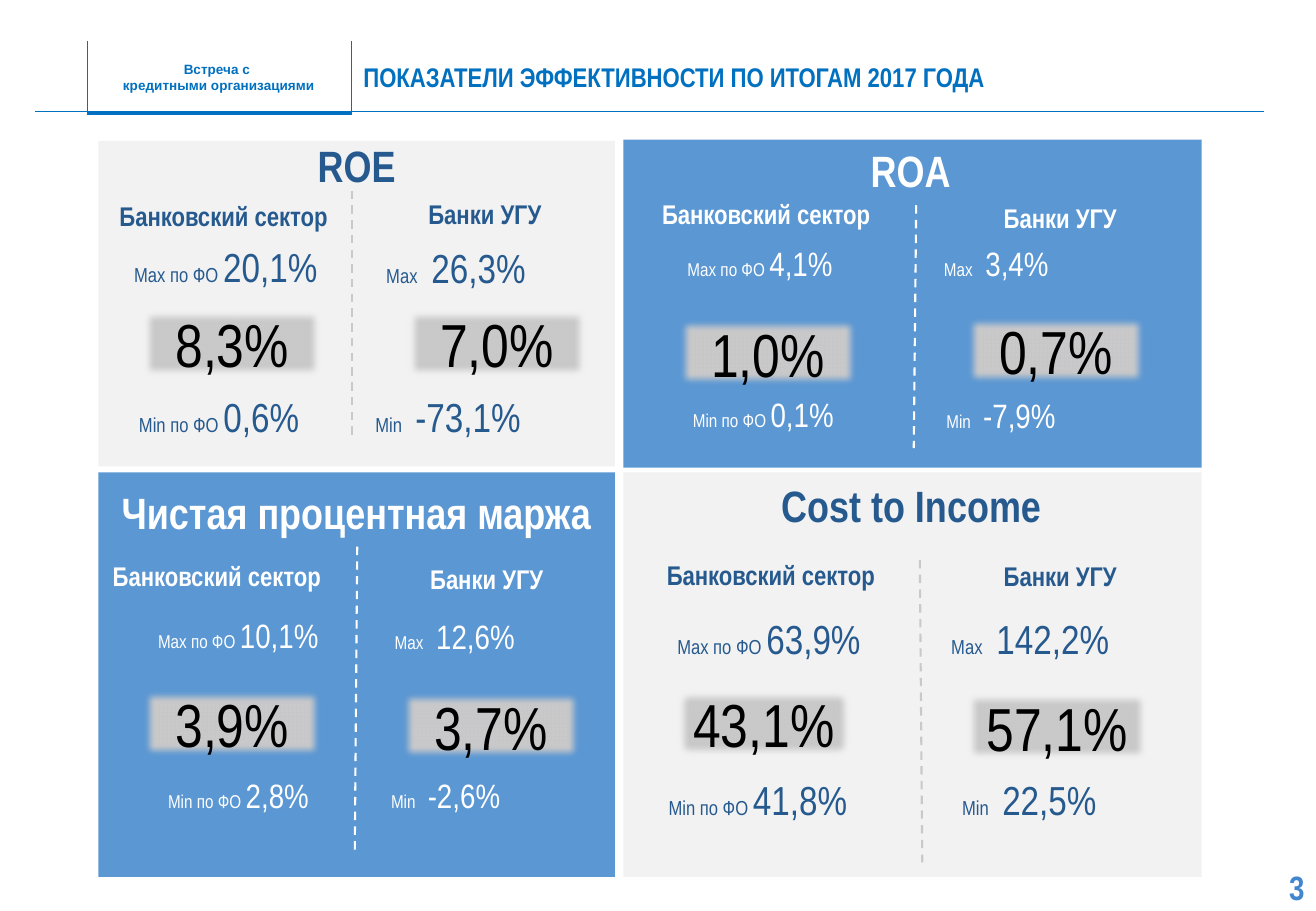
"""Build the slide of bank efficiency indicators for 2017."""
from dataclasses import dataclass
from typing import NamedTuple

from lxml.etree import SubElement
from pptx import Presentation
from pptx.dml.color import RGBColor
from pptx.enum.dml import MSO_LINE
from pptx.enum.shapes import MSO_CONNECTOR, MSO_SHAPE
from pptx.enum.text import MSO_ANCHOR, MSO_AUTO_SIZE, PP_ALIGN
from pptx.oxml.ns import qn
from pptx.shapes.autoshape import Shape
from pptx.slide import Slide
from pptx.text.text import TextFrame
from pptx.util import Inches, Pt


class Box(NamedTuple):
    left: float
    top: float
    width: float
    height: float


class Place(NamedTuple):
    left: float
    top: float
    width: float


class Line(NamedTuple):
    x1: float
    y1: float
    x2: float
    y2: float


class Span(NamedTuple):
    text: str
    size: float
    color: str
    bold: bool = False
    font: str = "Arial Narrow"


class Tone(NamedTuple):
    fill: str
    ink: str
    dash: str
    label_size: float
    value_size: float
    value_height: float


@dataclass(frozen=True)
class Theme:
    accent: str = "0070C0"
    number: str = "4287CD"
    plate: str = "C9C9CA"
    plate_ink: str = "000000"
    event_size: float = 8
    heading_size: float = 16
    number_size: float = 20
    panel_size: float = 26
    average_size: float = 36
    soft_edge: float = 0.07
    light: Tone = Tone("F2F2F2", "265A8F", "C9C9CA", 12, 24, 0.5)
    dark: Tone = Tone("5B97D3", "FFFFFF", "FFFFFF", 11, 20, 0.44)


class Figure(NamedTuple):
    value: str
    place: Place


class Column(NamedTuple):
    heading: Place
    highest: Figure
    average: Figure
    lowest: Figure


class Panel(NamedTuple):
    name: str
    tone: Tone
    area: Box
    title: Place
    divider: Line
    sector: Column
    region: Column


THEME = Theme()

HEADER_LINES = [
    (Line(0.29, 0.92, 0.72, 0.92), 0.25),
    (Line(0.72, 0.93, 2.9, 0.93), 2.25),
    (Line(2.88, 0.92, 10.4, 0.92), 0.25),
    (Line(0.72, 0.34, 0.72, 0.93), 0.25),
    (Line(2.89, 0.34, 2.89, 0.93), 0.25),
]

PANELS = [
    Panel("ROE", THEME.light, Box(0.81, 1.16, 4.25, 2.68), Place(0.81, 1.09, 4.25),
          Line(2.9, 1.57, 2.9, 3.58),
          Column(Place(0.8, 1.59, 2.08), Figure("20,1%", Place(0.75, 1.94, 1.96)),
                 Figure("8,3%", Place(1.15, 2.52, 1.52)), Figure("0,6%", Place(0.73, 3.18, 1.83))),
          Column(Place(2.93, 1.58, 2.12), Figure("26,3%", Place(3.08, 1.95, 2.09)),
                 Figure("7,0%", Place(3.33, 2.52, 1.52)), Figure("-73,1%", Place(2.99, 3.18, 2.34)))),
    Panel("ROA", THEME.dark, Box(5.13, 1.15, 4.76, 2.7), Place(5.11, 1.13, 4.77),
          Line(7.54, 1.69, 7.52, 3.69),
          Column(Place(5.1, 1.58, 2.41), Figure("4,1%", Place(4.99, 1.95, 1.96)),
                 Figure("1,0%", Place(5.56, 2.6, 1.52)), Figure("0,1%", Place(5.13, 3.19, 1.83))),
          Column(Place(7.57, 1.61, 2.31), Figure("3,4%", Place(7.67, 1.95, 1.94)),
                 Figure("0,7%", Place(7.93, 2.58, 1.52)), Figure("-7,9%", Place(7.69, 3.2, 2.11)))),
    Panel("Чистая процентная маржа", THEME.dark, Box(0.81, 3.89, 4.25, 3.33), Place(0.81, 3.95, 4.25),
          Line(2.94, 4.5, 2.92, 7.01),
          Column(Place(0.75, 4.56, 2.07), Figure("10,1%", Place(0.55, 5.01, 2.17)),
                 Figure("3,9%", Place(1.15, 5.65, 1.52)), Figure("2,8%", Place(0.47, 6.33, 2.17))),
          Column(Place(2.94, 4.58, 2.13), Figure("12,6%", Place(3.15, 5.02, 1.94)),
                 Figure("3,7%", Place(3.28, 5.67, 1.52)), Figure("-2,6%", Place(3.12, 6.33, 1.77)))),
    Panel("Cost to Income", THEME.light, Box(5.13, 3.89, 4.76, 3.33), Place(5.13, 3.89, 4.74),
          Line(7.57, 4.61, 7.59, 7.1),
          Column(Place(5.11, 4.55, 2.47), Figure("63,9%", Place(5.01, 5.01, 2.17)),
                 Figure("43,1%", Place(5.54, 5.65, 1.49)), Figure("41,8%", Place(4.9, 6.33, 2.17))),
          Column(Place(7.59, 4.56, 2.27), Figure("142,2%", Place(7.73, 5.01, 1.94)),
                 Figure("57,1%", Place(7.93, 5.68, 1.54)), Figure("22,5%", Place(7.82, 6.33, 2.06)))),
]


def write(frame: TextFrame, spans: list[Span], align: PP_ALIGN, **settings: object) -> None:
    for name, value in {"word_wrap": True, **settings}.items():
        setattr(frame, name, value)
    para = frame.paragraphs[0]
    para.alignment = align
    for span in spans:
        for index, text in enumerate(span.text.split("\n")):
            if index:
                para.add_line_break()
            run = para.add_run()
            run.text = text
            formats = {"name": span.font, "size": Pt(span.size), "bold": span.bold}
            for name, value in formats.items():
                setattr(run.font, name, value)
            run.font.color.rgb = RGBColor.from_string(span.color)


def add_text(page: Slide, box: Box, spans: list[Span], align: PP_ALIGN, **settings: object) -> Shape:
    shape = page.shapes.add_textbox(*map(Inches, box))
    write(shape.text_frame, spans, align, auto_size=MSO_AUTO_SIZE.SHAPE_TO_FIT_TEXT, **settings)
    return shape


def add_rectangle(page: Slide, box: Box, color: str) -> Shape:
    shape = page.shapes.add_shape(MSO_SHAPE.RECTANGLE, *map(Inches, box))
    shape.shadow.inherit = False
    shape.fill.solid()
    shape.fill.fore_color.rgb = RGBColor.from_string(color)
    shape.line.fill.background()
    return shape


def add_line(page: Slide, line: Line, color: str, width: float, dash: MSO_LINE | None = None) -> None:
    connector = page.shapes.add_connector(MSO_CONNECTOR.STRAIGHT, *map(Inches, line))
    connector.line.color.rgb = RGBColor.from_string(color)
    connector.line.width = Pt(width)
    connector.line.dash_style = dash
    SubElement(connector.element.spPr, qn("a:effectLst"))


def add_limit(page: Slide, figure: Figure, label: str, tone: Tone, is_sector: bool) -> None:
    text = f"{label} по ФО " if is_sector else f"{label}\t"
    spans = [Span(text, tone.label_size, tone.ink), Span(figure.value, tone.value_size, tone.ink)]
    align = PP_ALIGN.RIGHT if is_sector else PP_ALIGN.LEFT
    shape = add_text(page, Box(*figure.place, tone.value_height), spans, align)
    if not is_sector:
        stop = Inches(tone.label_size * {"Max": 0.031, "Min": 0.0275}[label])
        properties = shape.text_frame.paragraphs[0]._p.get_or_add_pPr()
        tabs = SubElement(properties, qn("a:tabLst"))
        SubElement(tabs, qn("a:tab"), pos=str(stop), algn="l")


def add_average(page: Slide, figure: Figure) -> None:
    plate = add_rectangle(page, Box(*figure.place, 0.61), THEME.plate)
    effects = plate.element.spPr.find(qn("a:effectLst"))
    SubElement(effects, qn("a:softEdge"), rad=str(Inches(THEME.soft_edge)))
    span = Span(figure.value, THEME.average_size, THEME.plate_ink)
    write(plate.text_frame, [span], PP_ALIGN.CENTER, vertical_anchor=MSO_ANCHOR.MIDDLE)


def add_panel(page: Slide, panel: Panel) -> None:
    tone = panel.tone
    add_rectangle(page, panel.area, tone.fill)
    title = Span(panel.name, THEME.panel_size, tone.ink, True)
    add_text(page, Box(*panel.title, 0.54), [title], PP_ALIGN.CENTER)
    add_line(page, panel.divider, tone.dash, 1.25, MSO_LINE.DASH)
    for name, column in (("Банковский сектор", panel.sector), ("Банки УГУ", panel.region)):
        heading = Span(name, THEME.heading_size, tone.ink, True)
        add_text(page, Box(*column.heading, 0.37), [heading], PP_ALIGN.CENTER)
        for label, figure in (("Max", column.highest), ("Min", column.lowest)):
            add_limit(page, figure, label, tone, column is panel.sector)
        add_average(page, column.average)


def main() -> None:
    deck = Presentation()
    deck.slide_width, deck.slide_height = Inches(10.83), Inches(7.5)
    page = deck.slides.add_slide(deck.slide_layouts[5])
    flush = {f"margin_{side}": 0 for side in ("left", "top", "right", "bottom")}
    flush["vertical_anchor"] = MSO_ANCHOR.MIDDLE
    for line, width in HEADER_LINES:
        add_line(page, line, THEME.accent, width)
    event = Span("Встреча с \nкредитными организациями", THEME.event_size, THEME.accent, True, "Arial")
    add_text(page, Box(0.74, 0.5, 2.12, 0.27), [event], PP_ALIGN.CENTER, **flush)
    title = page.shapes.title
    for name, value in Box(2.99, 0.36, 7.35, 0.57)._asdict().items():
        setattr(title, name, Inches(value))
    heading = Span("ПОКАЗАТЕЛИ ЭФФЕКТИВНОСТИ ПО ИТОГАМ 2017 ГОДА", THEME.heading_size, THEME.accent, True)
    write(title.text_frame, [heading], PP_ALIGN.LEFT, auto_size=MSO_AUTO_SIZE.NONE, **flush)
    title.text_frame.paragraphs[0].line_spacing = 0.9
    for panel in PANELS:
        add_panel(page, panel)
    number = Span("3", THEME.number_size, THEME.number, True)
    add_text(page, Box(10.61, 7.1, 0.23, 0.4), [number], PP_ALIGN.LEFT, **flush)
    deck.save("out.pptx")


if __name__ == "__main__":
    main()
